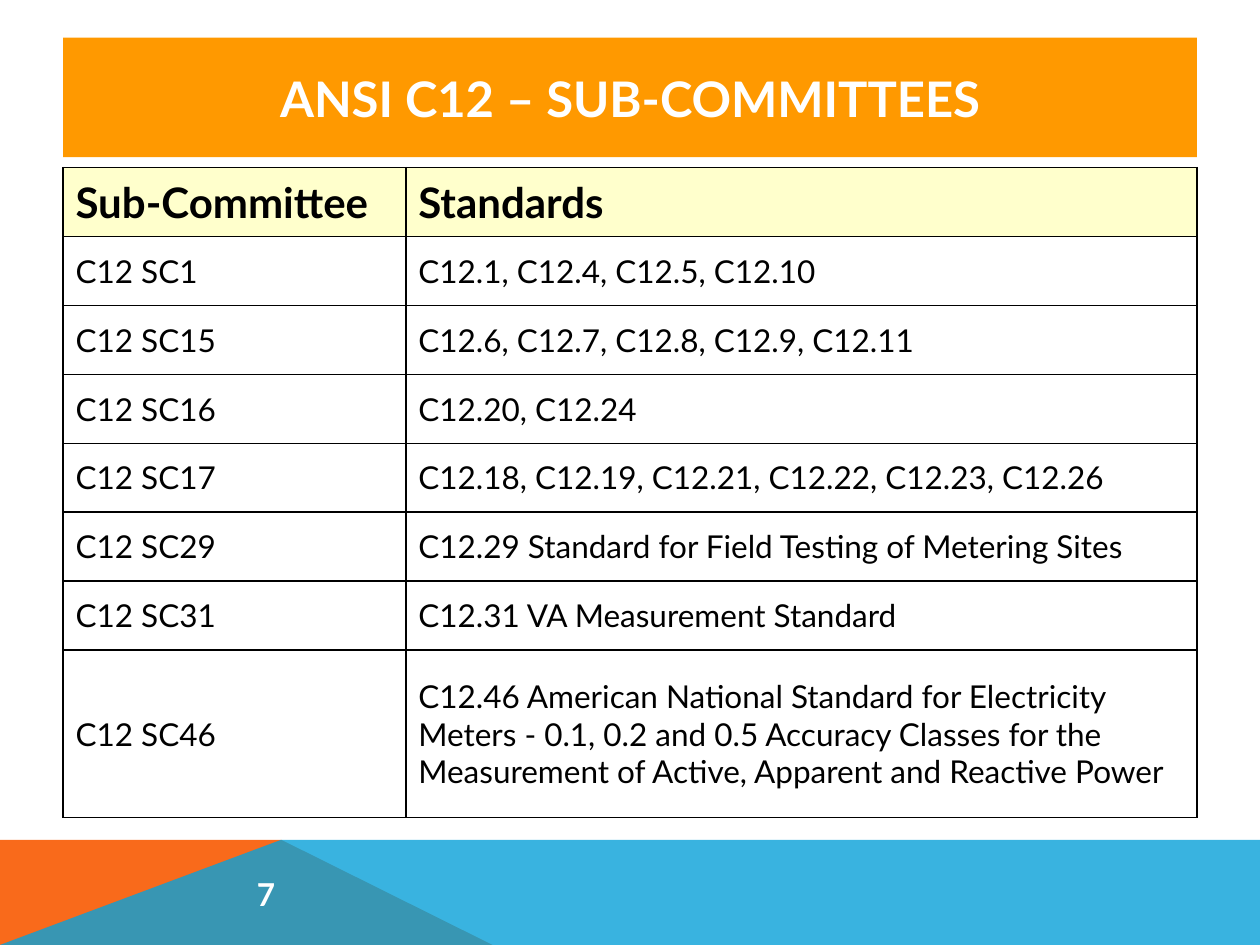
from lxml import etree
from pptx import Presentation
from pptx.dml.color import RGBColor
from pptx.enum import shapes, text
from pptx.oxml import ns
from pptx.util import Cm, Pt

WHITE = RGBColor(0xFF, 0xFF, 0xFF)
BLACK = RGBColor(0x00, 0x00, 0x00)
AMBER = RGBColor(0xFF, 0x99, 0x00)
CREAM = RGBColor(0xFF, 0xFF, 0xCC)
ORANGE = RGBColor(0xF9, 0x6A, 0x1B)
BLUE = RGBColor(0x08, 0xA1, 0xD9)

WIDE, HIGH = 25.4, 19.05
LEFT, SPAN = 1.27, 22.86
BAND, PEAK = 16.93, 5.67

ROWS = [
    ("Sub-Committee", "Standards"),
    ("C12 SC1", "C12.1, C12.4, C12.5, C12.10"),
    ("C12 SC15", "C12.6, C12.7, C12.8, C12.9, C12.11"),
    ("C12 SC16", "C12.20, C12.24"),
    ("C12 SC17", "C12.18, C12.19, C12.21, C12.22, C12.23, C12.26"),
    ("C12 SC29", "C12.29 Standard for Field Testing of Metering Sites"),
    ("C12 SC31", "C12.31 VA Measurement Standard"),
    ("C12 SC46", "C12.46 American National Standard for Electricity Meters - "
                 "0.1, 0.2 and 0.5 Accuracy Classes for the Measurement of "
                 "Active, Apparent and Reactive Power"),
]


def write(frame, words, size=18, color=BLACK, bold=False,
          align=text.PP_ALIGN.LEFT):
    frame.word_wrap = True
    para = frame.paragraphs[0]
    para.alignment = align
    run = para.add_run()
    run.text = words
    font = run.font
    font.name, font.size, font.bold = "Lato", Pt(size), bold
    font.color.rgb = color


def add_sub(parent, tag, **attrs):
    return etree.SubElement(parent, ns.qn(tag), **attrs)


def add_band(slide, points, color, alpha=None):
    spots = [(Cm(x), Cm(y)) for x, y in points]
    pen = slide.shapes.build_freeform(*spots[0])
    pen.add_line_segments(spots[1:], close=True)
    band = pen.convert_to_shape()
    band.shadow.inherit = False
    band.line.fill.background()
    band.fill.solid()
    band.fill.fore_color.rgb = color
    if alpha:
        tint = band.element.spPr.find(".//" + ns.qn("a:srgbClr"))
        add_sub(tint, "a:alpha", val=str(alpha * 1000))


def add_title(slide, words):
    title = slide.shapes.title
    title.left, title.top = Cm(LEFT), Cm(0.76)
    title.width, title.height = Cm(SPAN), Cm(2.41)
    title.fill.solid()
    title.fill.fore_color.rgb = AMBER
    title.text_frame.vertical_anchor = text.MSO_ANCHOR.MIDDLE
    write(title.text_frame, words, size=28, color=WHITE, bold=True,
          align=text.PP_ALIGN.CENTER)


def add_edges(cell):
    props = cell._tc.get_or_add_tcPr()
    for side in "LRTB":
        line = add_sub(props, f"a:ln{side}", w=str(Pt(1)))
        fill = add_sub(line, "a:solidFill")
        add_sub(fill, "a:srgbClr", val=str(BLACK))


def add_grid(slide, rows):
    frame = slide.shapes.add_table(
        len(rows), 2, Cm(LEFT), Cm(3.38), Cm(SPAN), Cm(13.13))
    grid = frame.table
    grid.first_row = grid.horz_banding = False
    for col, width in zip(grid.columns, (6.91, 15.95)):
        col.width = Cm(width)
    for i, row in enumerate(rows):
        head = i == 0
        grid.rows[i].height = Cm(3.38 if i == len(rows) - 1 else 1.39)
        for j, words in enumerate(row):
            cell = grid.cell(i, j)
            cell.vertical_anchor = text.MSO_ANCHOR.MIDDLE
            add_edges(cell)
            if head:
                cell.fill.solid()
                cell.fill.fore_color.rgb = CREAM
            else:
                cell.fill.background()
            write(cell.text_frame, words, size=24 if head else 18, bold=head)


def add_number(slide, words):
    spot = slide.shapes.add_shape(
        shapes.MSO_SHAPE.OVAL, Cm(4.65), Cm(17.3), Cm(1.9), Cm(1.4))
    spot.shadow.inherit = False
    spot.fill.background()
    spot.line.fill.background()
    spot.text_frame.vertical_anchor = text.MSO_ANCHOR.TOP
    write(spot.text_frame, words, color=WHITE, bold=True)


def main():
    deck = Presentation()
    deck.slide_width, deck.slide_height = Cm(WIDE), Cm(HIGH)
    slide = deck.slides.add_slide(deck.slide_layouts[5])
    add_band(slide, [(0, HIGH), (0, BAND), (PEAK, BAND), (9.93, HIGH)],
             ORANGE)
    add_band(slide, [(0, HIGH), (PEAK, BAND), (WIDE, BAND), (WIDE, HIGH)],
             BLUE, alpha=80)
    add_title(slide, "ANSI C12 – SUB-COMMITTEES")
    add_grid(slide, ROWS)
    add_number(slide, "7")
    deck.save("out.pptx")


if __name__ == "__main__":
    main()
